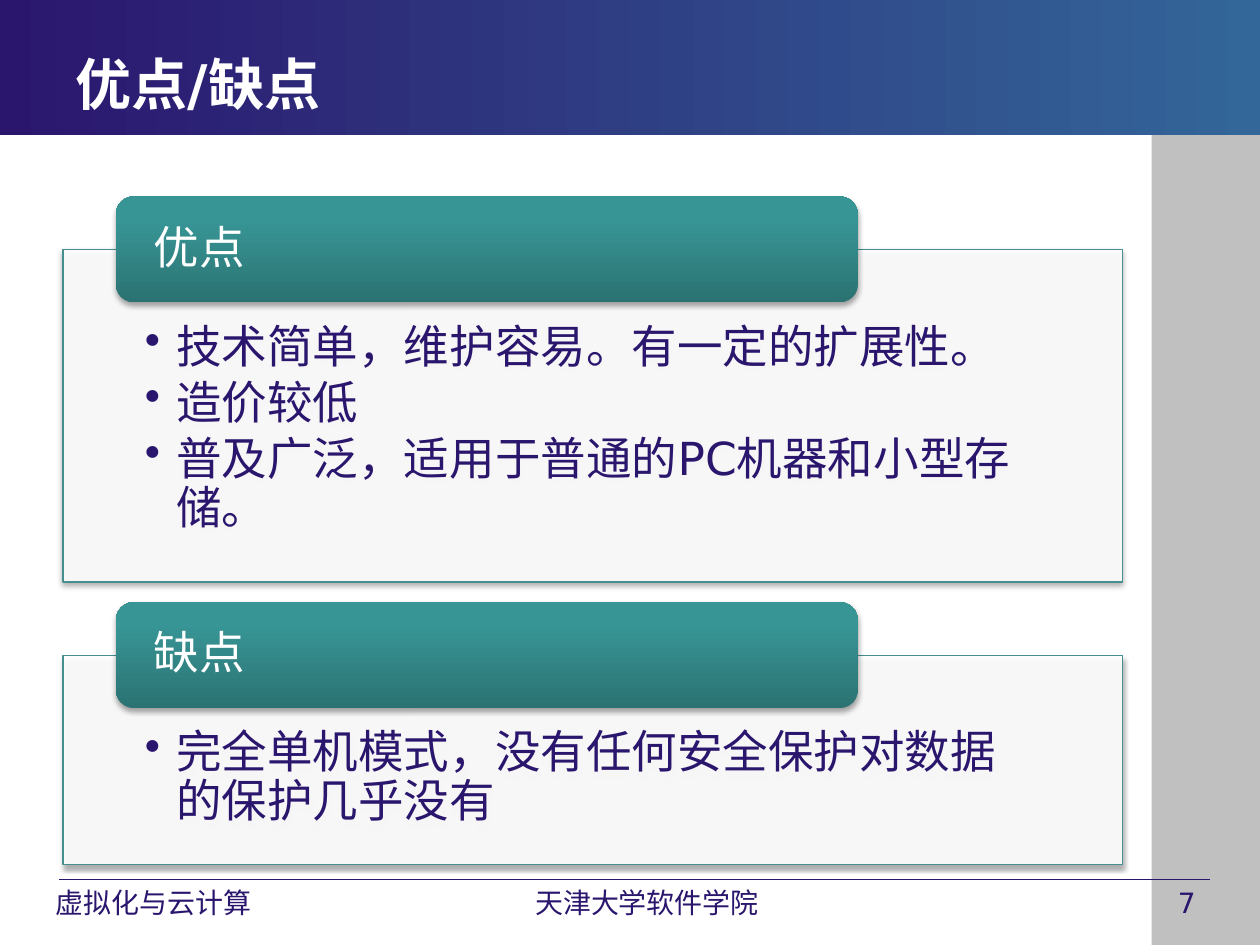
import pptx
import pptx.dml.color
import pptx.enum.shapes
import pptx.enum.text
import pptx.oxml
import pptx.oxml.ns
import pptx.util
from pptx.util import Inches

SHAPES = pptx.enum.shapes.MSO_SHAPE
ALIGN = pptx.enum.text.PP_ALIGN
ANCHOR = pptx.enum.text.MSO_ANCHOR
NS = pptx.oxml.ns.nsdecls("a")
qn = pptx.oxml.ns.qn

NAVY, WHITE, TEAL = "2B166E", "FFFFFF", "458F8F"
TAB_STOPS = [(0, "2B7373"), (80, "389595"), (100, "379898")]
HEADER_STOPS = [(0, NAVY), (100, "336699")]
TAB_HEIGHT = 0.84


def color(value):
    return pptx.dml.color.RGBColor.from_string(value)


def apply(target, formats):
    for name, value in formats.items():
        setattr(target, name, value)


def add_block(slide, box, kind=SHAPES.RECTANGLE):
    block = slide.shapes.add_shape(kind, *map(Inches, box))
    block.shadow.inherit = False
    block.line.fill.background()
    return block


def fill_solid(block, value):
    block.fill.solid()
    block.fill.fore_color.rgb = color(value)


def fill_gradient(block, stops, angle):
    block.fill.gradient()
    block.fill.gradient_angle = angle
    stop_list = block._element.spPr.find(".//" + qn("a:gsLst"))
    for stop in list(stop_list):
        stop_list.remove(stop)
    for position, value in stops:
        stop_list.append(pptx.oxml.parse_xml(
            f'<a:gs {NS} pos="{position * 1000}"><a:srgbClr val="{value}"/></a:gs>'))


def add_shadow(block):
    effects = block._element.spPr.find(qn("a:effectLst"))
    effects.append(pptx.oxml.parse_xml(
        f'<a:outerShdw {NS} blurRad="{pptx.util.Pt(3.1)}" dist="{pptx.util.Pt(1.8)}" '
        'dir="5400000" rotWithShape="0"><a:srgbClr val="000000">'
        '<a:alpha val="35000"/></a:srgbClr></a:outerShdw>'))


def write(holder, lines, size, ink, frame=None, bold=False, bullet=False, **paragraph_format):
    text_frame = holder.text_frame
    apply(text_frame, {"word_wrap": True, "vertical_anchor": ANCHOR.TOP, **(frame or {})})
    text_frame.text = "\n".join(lines)
    for paragraph in text_frame.paragraphs:
        apply(paragraph, {"alignment": ALIGN.LEFT, **paragraph_format})
        font = paragraph.runs[0].font
        apply(font, {"name": "DejaVu Sans", "size": pptx.util.Pt(size), "bold": bold})
        font.color.rgb = color(ink)
        if bullet:
            properties = paragraph._p.get_or_add_pPr()
            properties.set("marL", str(Inches(0.25)))
            properties.set("indent", str(Inches(-0.25)))
            properties.append(pptx.oxml.parse_xml(f'<a:buChar {NS} char="•"/>'))


def add_text(slide, box, text, size, ink, **formats):
    holder = slide.shapes.add_textbox(*map(Inches, box))
    write(holder, [text], size, ink, **formats)


def add_sidebar(slide, box):
    fill_solid(add_block(slide, box), "C0C0C0")


def add_header(slide, box, title):
    left, top, width, height = box
    fill_gradient(add_block(slide, box), HEADER_STOPS, 0)
    add_text(slide, (left + 0.5, top + 0.35, 6.75, 0.62), title, 32, WHITE,
             bold=True, frame={"vertical_anchor": ANCHOR.MIDDLE})


def add_footer(slide, box, course, school, number):
    left, top, width, height = box
    rule = slide.shapes.add_connector(
        pptx.enum.shapes.MSO_CONNECTOR.STRAIGHT,
        Inches(left), Inches(top), Inches(left + width), Inches(top))
    rule.line.color.rgb = color(NAVY)
    rule.line.width = pptx.util.Pt(0.75)
    rule._element.spPr.append(pptx.oxml.parse_xml(f"<a:effectLst {NS}/>"))
    entries = [(course, -0.22, 1.94, ALIGN.CENTER),
               (school, 3.54, 2.25, ALIGN.CENTER),
               (number, 8.78, 0.71, ALIGN.LEFT)]
    for text, offset, entry_width, alignment in entries:
        add_text(slide, (left + offset, top, entry_width, height), text, 16, NAVY,
                 alignment=alignment)


def add_section(slide, box, heading, points):
    left, top, width, height = box
    panel = add_block(slide, (left, top + TAB_HEIGHT / 2, width, height - TAB_HEIGHT / 2))
    fill_solid(panel, WHITE)
    panel_color = panel._element.spPr.find(qn("a:solidFill"))[0]
    panel_color.append(pptx.oxml.parse_xml(f'<a:alpha {NS} val="90000"/>'))
    panel.line.color.rgb = color(TEAL)
    panel.line.width = pptx.util.Pt(0.75)
    add_shadow(panel)
    write(panel, points, 26, NAVY, bullet=True, line_spacing=0.9,
          space_after=pptx.util.Pt(4),
          frame={"margin_left": Inches(0.65), "margin_right": Inches(0.65),
                 "margin_top": Inches(0.59), "margin_bottom": Inches(0.2)})

    tab = add_block(slide, (left + 0.42, top, width * 0.7, TAB_HEIGHT),
                    SHAPES.ROUNDED_RECTANGLE)
    fill_gradient(tab, TAB_STOPS, 90)
    add_shadow(tab)
    write(tab, [heading], 26, WHITE, line_spacing=0.9,
          frame={"vertical_anchor": ANCHOR.MIDDLE, "margin_left": Inches(0.26),
                 "margin_right": Inches(0.26), "margin_top": 0, "margin_bottom": 0})


def main():
    deck = pptx.Presentation()
    apply(deck, {"slide_width": Inches(10), "slide_height": Inches(7.5)})
    slide = deck.slides.add_slide(deck.slide_layouts[6])
    add_sidebar(slide, (9.14, 1.07, 0.86, 6.43))
    add_footer(slide, (0.47, 6.98, 9.13, 0.35), "虚拟化与云计算", "天津大学软件学院", "7")
    add_header(slide, (0, 0, 10, 1.07), "优点/缺点")
    add_section(slide, (0.5, 1.56, 8.41, 3.06), "优点",
                ["技术简单，维护容易。有一定的扩展性。", "造价较低",
                 "普及广泛，适用于普通的PC机器和小型存储。"])
    add_section(slide, (0.5, 4.78, 8.41, 2.08), "缺点",
                ["完全单机模式，没有任何安全保护对数据的保护几乎没有"])
    deck.save("out.pptx")


if __name__ == "__main__":
    main()
